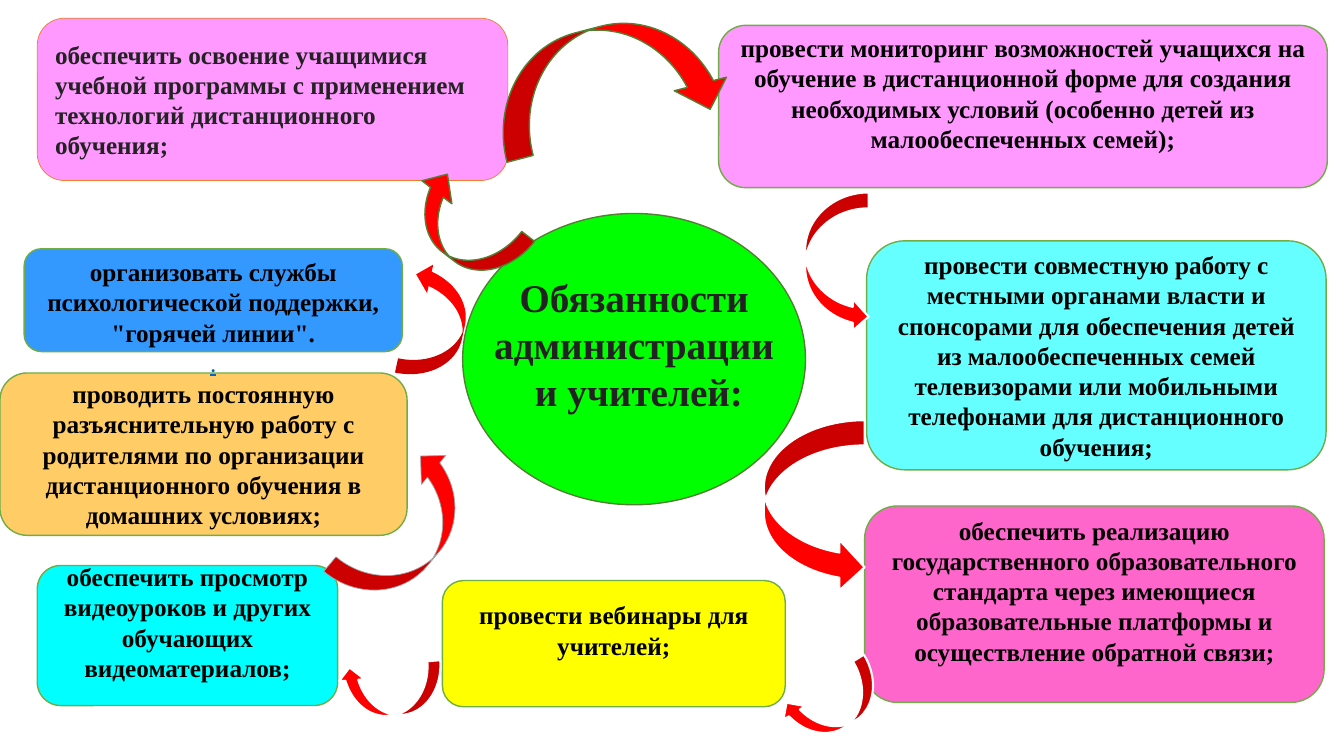
from pptx import Presentation
from pptx.dml.color import RGBColor
from pptx.enum.shapes import MSO_SHAPE
from pptx.enum.text import MSO_ANCHOR, MSO_AUTO_SIZE, PP_ALIGN
from pptx.util import Cm, Pt

SERIF = "Times New Roman"
GREEN, DARK_GREEN, ORANGE, RED = "70AD47", "538035", "ED7D31", "FF0000"
BLACK, CHARCOAL, LINK, WHITE, GREY = "000000", "222222", "0563C1", "FFFFFF", "A5A5A5"
ONE_LINE = 0.69
CENTER = PP_ALIGN.CENTER

CARDS = [
    ((0.94, 0.46, 11.86, 4.09), "FF99FF", 0,
     "обеспечить освоение учащимися учебной программы с применением технологий "
     "дистанционного обучения;",
     {"edge": (ORANGE, 0.5), "color": CHARCOAL, "align": PP_ALIGN.LEFT}),
    ((18.11, 0.64, 15.34, 4.09), "FF99FF", ONE_LINE,
     "провести мониторинг возможностей учащихся на обучение в дистанционной форме "
     "для создания необходимых условий (особенно детей из малообеспеченных семей);", {}),
    ((21.84, 6.07, 11.58, 5.77), "66FFFF", 0,
     "провести совместную работу с местными органами власти и спонсорами для "
     "обеспечения детей из малообеспеченных семей телевизорами или мобильными "
     "телефонами для дистанционного обучения;", {}),
    ((21.79, 12.75, 11.58, 4.95), "FF66CC", ONE_LINE,
     "обеспечить реализацию государственного образовательного стандарта через "
     "имеющиеся образовательные платформы и осуществление обратной связи;", {}),
    ((11.15, 14.63, 8.64, 3.18), "FFFF00", ONE_LINE,
     "провести вебинары для учителей;", {}),
    ((0.94, 14.25, 7.57, 3.53), "00FFFF", ONE_LINE,
     "обеспечить просмотр видеоуроков и других обучающих видеоматериалов;", {}),
    ((0, 9.4, 10.26, 4.09), "FFCC66", 0,
     "проводить постоянную разъяснительную работу с родителями по организации "
     "дистанционного обучения в домашних условиях;", {}),
    ((0.61, 6.27, 9.53, 2.59), "3399FF", -0.84,
     "организовать службы психологической поддержки, \"горячей линии\".",
     {"link": "."}),
]

RIGHT, LEFT, UP = (MSO_SHAPE.CURVED_RIGHT_ARROW, MSO_SHAPE.CURVED_LEFT_ARROW,
                   MSO_SHAPE.CURVED_UP_ARROW)
ARROWS = [
    (RIGHT, (20.29, 4.85, 1.6, 3.53), 0, (WHITE, 1.5), {}),
    (RIGHT, (19.25, 10.59, 2.54, 4.34), 0, (WHITE, 1.5), {}),
    (UP, (12.34, 0.66, 5.97, 2.72), 345.4, (DARK_GREEN, 1), {"flip": True}),
    (LEFT, (10.87, 4.11, 1.63, 3.25), 127.6, (DARK_GREEN, 1),
     {"bends": (0.25, 0.586, 0.321)}),
    (LEFT, (20.35, 16.43, 1.3, 2.62), 58.2, (WHITE, 1.5), {}),
    (LEFT, (9.19, 16.08, 1.3, 2.62), 85.4, (WHITE, 1.5), {}),
    (UP, (8.13, 12.42, 4.27, 1.91), 310, (GREY, 0.5), {}),
    (UP, (9.53, 7.39, 2.9, 1.47), 282.2, None, {}),
]


def paint(color_format, value):
    """Set a colour from a hex string."""
    color_format.rgb = RGBColor.from_string(value)


def assign(target, values):
    """Set every attribute in a dict of format values."""
    for name, value in values.items():
        setattr(target, name, value)


def add_span(para, text, size, color, **values):
    """Add a run with its font format."""
    span = para.add_run()
    span.text = text
    assign(span.font, {"name": SERIF, "size": Pt(size), "bold": True, **values})
    paint(span.font.color, color)


def add_figure(page, kind, box, fill, edge):
    """Add a flat preset shape in the given box."""
    figure = page.shapes.add_shape(kind, *map(Cm, box))
    figure.shadow.inherit = False
    figure.fill.solid()
    paint(figure.fill.fore_color, fill)
    if edge is None:
        figure.line.fill.background()
    else:
        paint(figure.line.color, edge[0])
        figure.line.width = Pt(edge[1])
    return figure


def add_card(page, box, fill, lift, text, edge=(GREEN, 1), color=BLACK,
             align=CENTER, link=None):
    """Add a rounded card whose text sits above its middle by half the lift."""
    frame = add_figure(page, MSO_SHAPE.ROUNDED_RECTANGLE, box, fill, edge).text_frame
    assign(frame, {"word_wrap": True, "vertical_anchor": MSO_ANCHOR.MIDDLE,
                   "margin_top": Cm(max(0, -lift)),
                   "margin_bottom": Cm(max(0, lift))})
    para = frame.paragraphs[0]
    para.alignment = align
    add_span(para, text, 18, color)
    if link:
        para.add_line_break()
        add_span(para, link, 18, LINK, name="Calibri", bold=False, underline=True)


def add_arrow(page, kind, box, angle, edge, flip=False, bends=()):
    """Add a curved arrow, turned, flipped and bent as asked."""
    arrow = add_figure(page, kind, box, RED, edge)
    arrow.rotation = angle
    if flip:
        arrow._element.spPr.xfrm.set("flipV", "1")
    for index, bend in enumerate(bends):
        arrow.adjustments[index] = bend


def add_center(page, box):
    """Add the green ellipse and lay the slide title over it."""
    left, top, width, height = box
    ellipse = add_figure(page, MSO_SHAPE.OVAL, box, "00FF00", (DARK_GREEN, 1))
    title = page.shapes.title
    assign(title, {"left": Cm(left - 0.05), "top": Cm(top + 1.38),
                   "width": Cm(width + 0.1), "height": Cm(3.84)})
    ellipse._element.addnext(title._element)
    frame = title.text_frame
    assign(frame, {"word_wrap": True, "auto_size": MSO_AUTO_SIZE.NONE,
                   "vertical_anchor": MSO_ANCHOR.TOP})
    lines = ["Обязанности администрации", " и учителей:"]
    for index, line in enumerate(lines):
        para = frame.add_paragraph() if index else frame.paragraphs[0]
        assign(para, {"alignment": CENTER, "line_spacing": 1.0, "space_before": Pt(0)})
        add_span(para, line, 28, CHARCOAL)


def main():
    """Build the slide of duties and save it."""
    deck = Presentation()
    assign(deck, {"slide_width": Cm(33.87), "slide_height": Cm(19.05)})
    page = deck.slides.add_slide(deck.slide_layouts.get_by_name("Title Only"))
    add_center(page, (11.66, 5.38, 8.64, 7.34))
    for box, fill, lift, text, options in CARDS:
        add_card(page, box, fill, lift, text, **options)
    for kind, box, angle, edge, options in ARROWS:
        add_arrow(page, kind, box, angle, edge, **options)
    deck.save("out.pptx")


if __name__ == "__main__":
    main()
